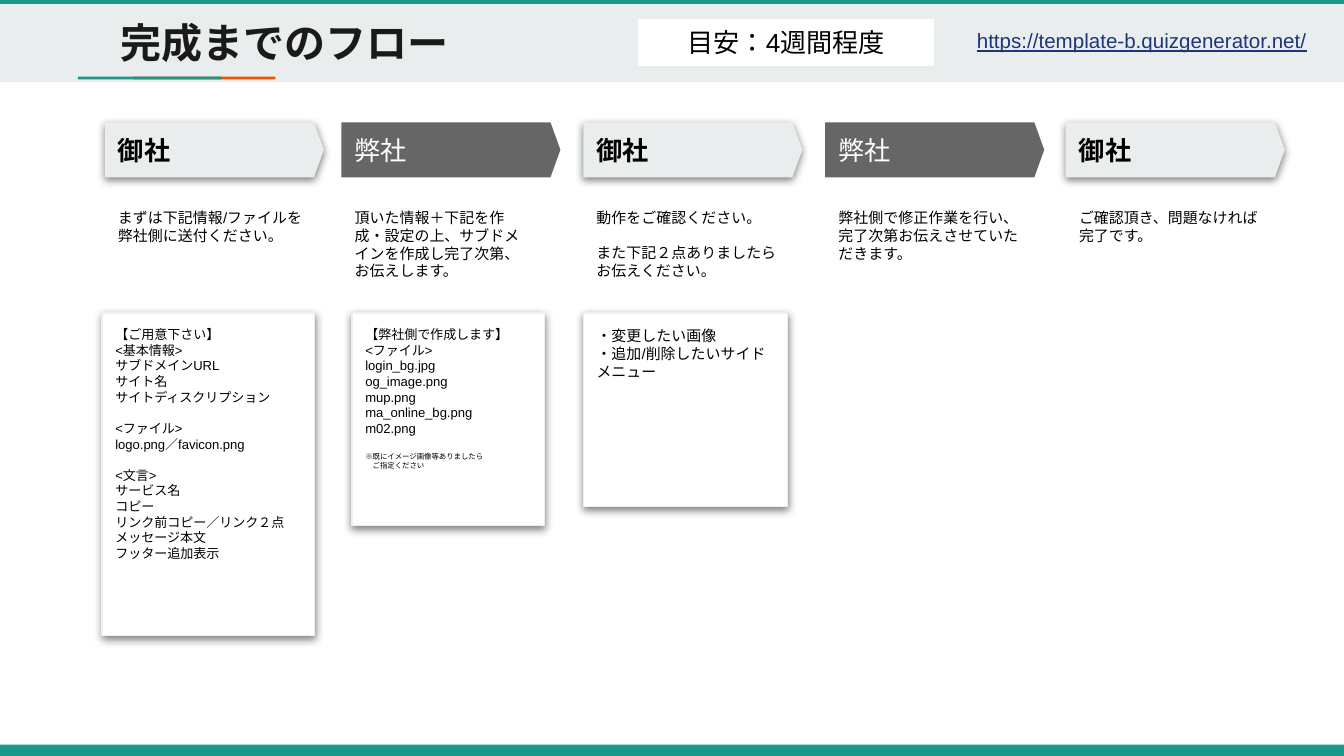
from dataclasses import dataclass

from lxml.etree import SubElement
from pptx import Presentation
from pptx.dml.color import RGBColor
from pptx.enum.lang import MSO_LANGUAGE_ID
from pptx.enum.shapes import MSO_SHAPE
from pptx.enum.text import MSO_ANCHOR, MSO_AUTO_SIZE, PP_ALIGN
from pptx.oxml.ns import qn
from pptx.util import Inches, Pt


@dataclass(frozen=True)
class Theme:
    """Fonts, colours and type sizes of the slide."""
    heading_font: str = "Manrope"
    body_font: str = "Arial"
    teal: str = "1A9988"
    orange: str = "EB5600"
    pale: str = "E9EDEE"
    dark: str = "666666"
    white: str = "FFFFFF"
    black: str = "000000"
    ink: str = "1A1A1A"
    border: str = "EFEFEF"
    link: str = "1C3678"
    title_size: float = 22
    label_size: float = 14
    link_size: float = 11
    body_size: float = 8
    list_size: float = 7
    note_size: float = 4


THEME = Theme()

STEPS = [
    (0.78, "御社", 1.63, [["まずは下記情報/ファイルを弊社側に送付ください。"]]),
    (2.54, "弊社", 1.52, [["頂いた情報＋下記を作成・設定の上、サブドメインを作成し完了次第、お伝えします。"]]),
    (4.34, "御社", 1.63, [["動作をご確認ください。"], ["また下記２点ありましたらお伝えください。"]]),
    (6.14, "弊社", 1.58, [["弊社側で修正作業を行い、完了次第お伝えさせていただきます。"]]),
    (7.93, "御社", 1.58, [["ご確認頂き、問題なければ完了です。"]]),
]

CHANGES = [["・変更したい画像", "・追加/削除したいサイドメニュー"]]
CREATED = [
    ["【弊社側で作成します】", "<ファイル>", "login_bg.jpg", "og_image.png",
     "mup.png", "ma_online_bg.png", "m02.png"],
    ["※既にイメージ画像等ありましたら", "　ご指定ください"],
]
REQUIRED = [
    ["【ご用意下さい】", "<基本情報>", "サブドメインURL", "サイト名", "サイトディスクリプション"],
    ["<ファイル>", "logo.png／favicon.png"],
    ["<文言>", "サービス名", "コピー", "リンク前コピー／リンク２点", "メッセージ本文", "フッター追加表示"],
]


def color(value):
    """Turn a hex string into a colour."""
    return RGBColor.from_string(value)


def add_run(paragraph, text, size, fill, font=THEME.body_font, bold=False, underline=False):
    """Add one formatted Japanese run to a paragraph."""
    run = paragraph.add_run()
    run.text = text
    run.font.language_id = MSO_LANGUAGE_ID.JAPANESE
    run.font.name = font
    run.font.size = Pt(size)
    run.font.bold = bold
    run.font.underline = underline
    run.font.color.rgb = color(fill)
    SubElement(run.font._element, qn("a:ea"), typeface=font)


def set_frame(shape, anchor=MSO_ANCHOR.TOP):
    """Give a text frame wrapping and equal insets, and return it."""
    frame = shape.text_frame
    frame.word_wrap = True
    frame.auto_size = MSO_AUTO_SIZE.NONE
    frame.vertical_anchor = anchor
    frame.margin_left = frame.margin_right = Inches(0.1)
    frame.margin_top = frame.margin_bottom = Inches(0.1)
    return frame


def fill_groups(frame, groups, sizes):
    """Write groups of lines, with one line of space between groups."""
    paragraph = None
    for group, size in zip(groups, sizes):
        for index, line in enumerate(group):
            starts_group = paragraph is not None and index == 0
            paragraph = frame.add_paragraph() if paragraph else frame.paragraphs[0]
            paragraph.alignment = PP_ALIGN.LEFT
            if starts_group:
                paragraph.space_before = Pt(sizes[0] * 1.19)
            add_run(paragraph, line, size, THEME.black)


def add_shadow(shape):
    """Add a soft shadow below a shape."""
    effects = shape.element.spPr.find(qn("a:effectLst"))
    shadow = SubElement(effects, qn("a:outerShdw"), blurRad=str(Pt(4.5)),
                        dist=str(Pt(1.5)), dir="5400000", algn="bl", rotWithShape="0")
    tint = SubElement(shadow, qn("a:srgbClr"), val=THEME.black)
    SubElement(tint, qn("a:alpha"), val="50000")


def add_block(slide, left, top, width, height, fill, kind=MSO_SHAPE.RECTANGLE):
    """Add a plain filled shape without outline."""
    shape = slide.shapes.add_shape(kind, Inches(left), Inches(top), Inches(width), Inches(height))
    shape.shadow.inherit = False
    shape.fill.solid()
    shape.fill.fore_color.rgb = color(fill)
    shape.line.fill.background()
    return shape


def add_text_box(slide, left, top, width, height):
    """Add a text box and return its frame."""
    box = slide.shapes.add_textbox(Inches(left), Inches(top), Inches(width), Inches(height))
    return set_frame(box)


def add_title(slide, text):
    """Place the title placeholder in front of the header band."""
    title = slide.shapes.title
    title.left, title.top = Inches(0.8), Inches(0.02)
    title.width, title.height = Inches(8.41), Inches(0.59)
    title.element.getparent().append(title.element)
    paragraph = set_frame(title, MSO_ANCHOR.MIDDLE).paragraphs[0]
    paragraph.alignment = PP_ALIGN.LEFT
    add_run(paragraph, text, THEME.title_size, THEME.ink, THEME.heading_font, bold=True)


def add_step(slide, left, owner, text_width, groups):
    """Add one arrow of the flow with its description."""
    is_client = owner == "御社"
    arrow = add_block(slide, left, 0.91, 1.63, 0.41,
                      THEME.pale if is_client else THEME.dark, MSO_SHAPE.PENTAGON)
    arrow.adjustments[0] = 0.18
    if is_client:
        add_shadow(arrow)
    paragraph = set_frame(arrow, MSO_ANCHOR.MIDDLE).paragraphs[0]
    paragraph.alignment = PP_ALIGN.LEFT
    add_run(paragraph, owner, THEME.label_size,
            THEME.black if is_client else THEME.white, bold=is_client)
    frame = add_text_box(slide, left, 1.45, text_width, 0.72)
    fill_groups(frame, groups, [THEME.body_size] * len(groups))


def add_card(slide, left, width, height, groups, sizes):
    """Add a shadowed card holding a list."""
    card = add_block(slide, left, 2.33, width, height, THEME.white)
    card.line.color.rgb = color(THEME.border)
    card.line.width = Pt(0.75)
    add_shadow(card)
    fill_groups(set_frame(card), groups, sizes)


def add_header(slide):
    """Add the header band, title, estimate and address."""
    add_block(slide, 0, 0, 10, 0.61, THEME.pale)
    add_block(slide, 0.99, 0.57, 1.06, 0.02, THEME.orange)
    add_block(slide, 0.58, 0.57, 1.07, 0.02, THEME.teal)
    add_block(slide, 0, 0, 10, 0.03, THEME.teal)
    add_title(slide, "完成までのフロー")
    estimate = add_block(slide, 4.75, 0.14, 2.2, 0.35, THEME.white)
    paragraph = set_frame(estimate, MSO_ANCHOR.MIDDLE).paragraphs[0]
    paragraph.alignment = PP_ALIGN.CENTER
    add_run(paragraph, "目安：4週間程度", THEME.label_size, THEME.black)
    address = add_text_box(slide, 7.17, 0.11, 2.75, 0.41).paragraphs[0]
    add_run(address, "https://template-b.quizgenerator.net/",
            THEME.link_size, THEME.link, underline=True)


def main():
    """Build the slide and save it."""
    presentation = Presentation()
    presentation.slide_width = Inches(10)
    presentation.slide_height = Inches(10) * 9 // 16
    slide = presentation.slides.add_slide(presentation.slide_layouts[5])
    add_header(slide)
    for step in STEPS:
        add_step(slide, *step)
    add_card(slide, 0.76, 1.58, 2.4, REQUIRED, [THEME.list_size] * len(REQUIRED))
    add_card(slide, 2.62, 1.43, 1.58, CREATED, [THEME.list_size, THEME.note_size])
    add_card(slide, 4.34, 1.52, 1.44, CHANGES, [THEME.body_size])
    add_block(slide, 0, 5.54, 10, 0.09, THEME.teal)
    presentation.save("out.pptx")


if __name__ == "__main__":
    main()
